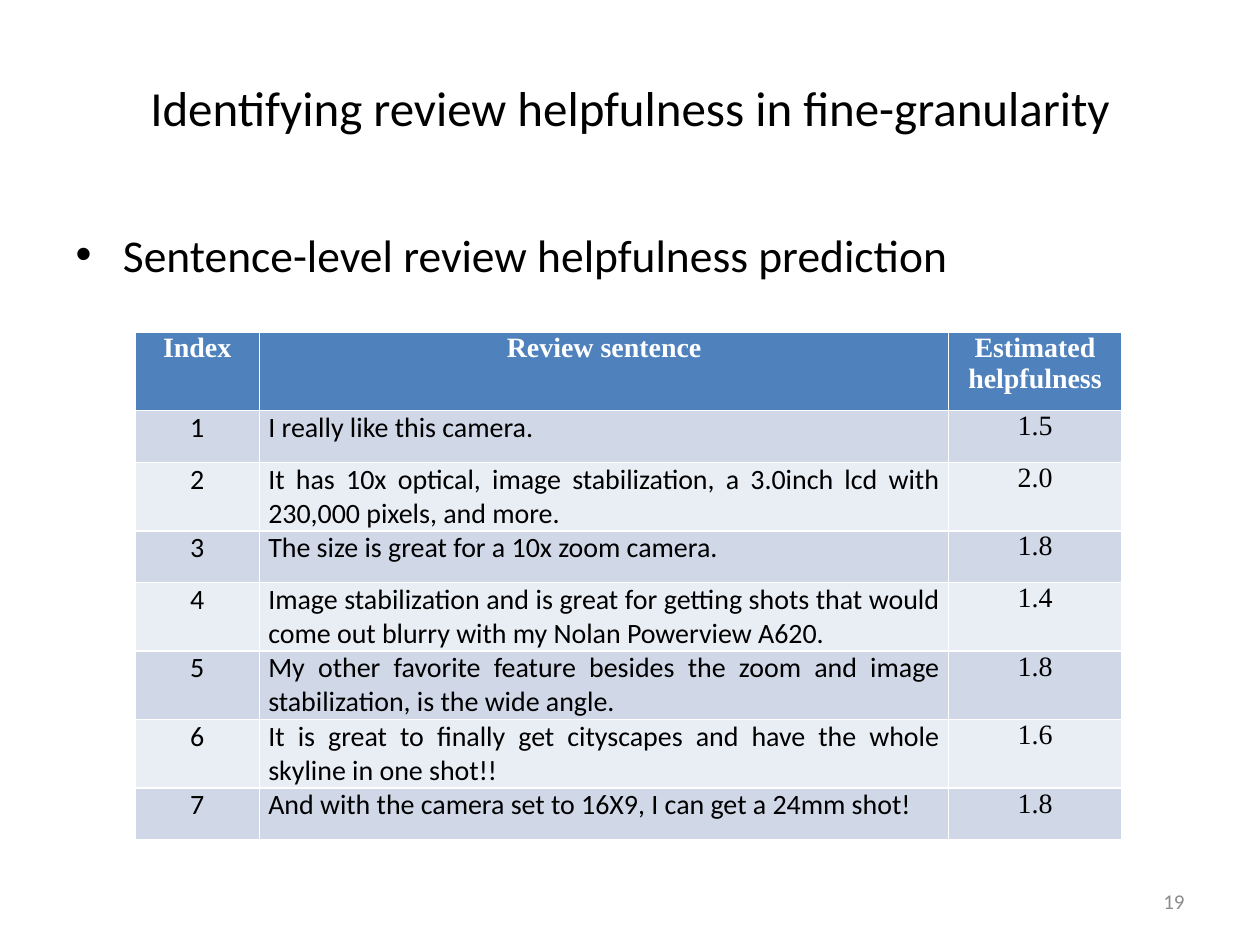
"""Build a slide with a table of sentence-level review helpfulness."""
import pptx
import pptx.dml.color
import pptx.enum.text
import pptx.util

Inches = pptx.util.Inches
Align = pptx.enum.text.PP_ALIGN
Anchor = pptx.enum.text.MSO_ANCHOR

hues = {"head": "4F81BD", "odd": "D0D8E8", "even": "E9EDF4",
        "white": "FFFFFF", "black": "000000", "gray": "8C8C8C"}
rows = [
    ("Index", "Review sentence", "Estimated helpfulness"),
    ("1", "I really like this camera.", "1.5"),
    ("2", "It has 10x optical, image stabilization, a 3.0inch lcd with 230,000 pixels, and more.", "2.0"),
    ("3", "The size is great for a 10x zoom camera.", "1.8"),
    ("4", "Image stabilization and is great for getting shots that would come out blurry with my Nolan Powerview A620.", "1.4"),
    ("5", "My other favorite feature besides the zoom and image stabilization, is the wide angle.", "1.8"),
    ("6", "It is great to finally get cityscapes and have the whole skyline in one shot!!", "1.6"),
    ("7", "And with the camera set to 16X9, I can get a 24mm shot!", "1.8"),
]
wides = [0.99, 5.47, 1.37]
highs = [0.62, 0.41, 0.53, 0.41, 0.53, 0.53, 0.53, 0.41]
faces = ["Calibri", "Calibri", "Times New Roman"]
sides = [Align.CENTER, Align.JUSTIFY, Align.CENTER]


def color(name):
    return pptx.dml.color.RGBColor.from_string(hues[name])


def style(para, size, face, hue, side):
    para.alignment = side
    para.font.size = pptx.util.Pt(size)
    para.font.name = face
    para.font.color.rgb = color(hue)


deck = pptx.Presentation()
deck.slide_width, deck.slide_height = Inches(10), Inches(7.5)
slide = deck.slides.add_slide(deck.slide_layouts[1])

title, body = slide.placeholders
title.left, title.top, title.width, title.height = map(Inches, (0.5, 0.22, 9, 1.25))
title.text_frame.text = "Identifying review helpfulness in fine-granularity"
title.text_frame.vertical_anchor = Anchor.MIDDLE
style(title.text_frame.paragraphs[0], 28, "Calibri", "black", Align.CENTER)

body.left, body.top, body.width, body.height = map(Inches, (0.5, 1.75, 9, 4.95))
body.text_frame.text = "Sentence-level review helpfulness prediction"
style(body.text_frame.paragraphs[0], 26, "Calibri", "black", Align.LEFT)

frame = slide.shapes.add_table(len(rows), len(wides), Inches(1.07), Inches(2.64),
                               Inches(sum(wides)), Inches(sum(highs)))
table = frame.table
for col, wide in zip(table.columns, wides):
    col.width = Inches(wide)
for r, (row, high) in enumerate(zip(rows, highs)):
    table.rows[r].height = Inches(high)
    band = "head" if r == 0 else "odd" if r % 2 else "even"
    for c, text in enumerate(row):
        cell = table.cell(r, c)
        cell.text = text
        cell.margin_left = cell.margin_right = Inches(0.07)
        cell.margin_top = cell.margin_bottom = 0
        cell.fill.solid()
        cell.fill.fore_color.rgb = color(band)
        para = cell.text_frame.paragraphs[0]
        para.font.bold = r == 0
        if r == 0:
            style(para, 16, "Times New Roman", "white", Align.CENTER)
        else:
            style(para, 16, faces[c], "black", sides[c])

page = slide.shapes.add_textbox(Inches(7.17), Inches(6.95), Inches(2.33), Inches(0.4))
page.text_frame.word_wrap = True
page.text_frame.vertical_anchor = Anchor.MIDDLE
page.text_frame.text = "19"
style(page.text_frame.paragraphs[0], 12, "Calibri", "gray", Align.RIGHT)

deck.save("out.pptx")
